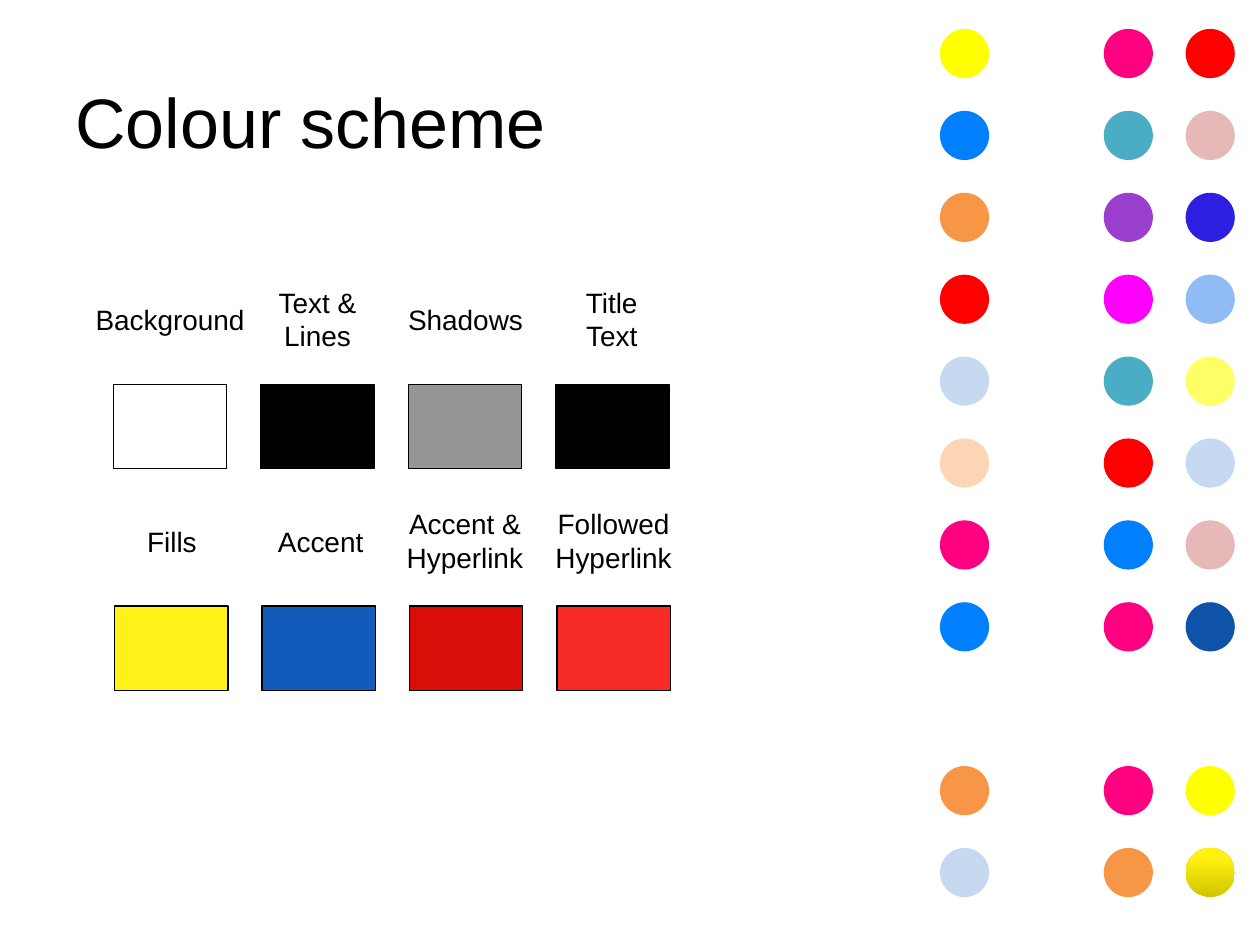
"""Build the colour scheme slide with its labelled swatches and dotted margin."""
from dataclasses import dataclass

from pptx import Presentation
from pptx.dml.color import RGBColor
from pptx.enum.shapes import MSO_SHAPE
from pptx.enum.text import MSO_ANCHOR, MSO_AUTO_SIZE, PP_ALIGN
from pptx.shapes.autoshape import Shape
from pptx.slide import Slide
from pptx.util import Emu, Pt

PX_PER_INCH = 100
EMU_PER_PX = 914400 // PX_PER_INCH


@dataclass(frozen=True)
class Theme:
    font: str = "Arial"
    text: str = "000000"
    outline: str = "000000"
    background: str = "FFFFFF"
    gradient_bottom: str = "D0C400"
    gradient_top: str = "FFF211"
    title_size: int = 40
    label_size: int = 16
    outline_width: float = 0.75


@dataclass(frozen=True)
class Swatch:
    paragraphs: tuple[str, ...]
    color: str
    label_left: int
    label_width: int


@dataclass(frozen=True)
class SwatchRow:
    left: int
    top: int
    label_middle: int
    swatches: tuple[Swatch, ...]


@dataclass(frozen=True)
class DotColumn:
    index: int
    colors: tuple[str, ...]


THEME = Theme()
SWATCH_WIDTH, SWATCH_HEIGHT, SWATCH_PITCH = 90, 67, 117
LABEL_HEIGHTS = {1: 37, 2: 64}
DOT_LEFT, DOT_TOP, DOT_SIZE, DOT_PITCH = 746, 23, 39, 65
DOT_ROWS = (0, 1, 2, 3, 4, 5, 6, 7, 9, 10)

SWATCH_ROWS = (
    SwatchRow(90, 305, 253, (
        Swatch(("Background",), "FFFFFF", 65, 140),
        Swatch(("Text &", "Lines"), "000000", 209, 86),
        Swatch(("Shadows",), "969696", 313, 113),
        Swatch(("Title\nText",), "000000", 453, 65),
    )),
    SwatchRow(91, 481, 429, (
        Swatch(("Fills",), "FFF218", 105, 63),
        Swatch(("Accent",), "125BBB", 209, 91),
        Swatch(("Accent &", "Hyperlink"), "D90E09", 311, 116),
        Swatch(("Followed", "Hyperlink"), "F62B26", 429, 116),
    )),
)

DOT_COLUMNS = (
    DotColumn(0, ("FFFF00", "0080FF", "F79646", "FF0000", "C6D9F1",
                  "FCD5B5", "FF0080", "0080FF", "F79646", "C6D9F1")),
    DotColumn(2, ("FF0080", "4BACC6", "993ECD", "FF00FF", "4BACC6",
                  "FF0000", "0080FF", "FF0080", "FF0080", "F79646")),
    DotColumn(3, ("FF0000", "E6B9B8", "2C1FDF", "90BBF4", "FFFF66",
                  "C6D9F1", "E6B9B8", "0F52A9", "FFFF00", THEME.gradient_top)),
)


def px(length: int) -> Emu:
    return Emu(length * EMU_PER_PX)


def rgb(color: str) -> RGBColor:
    return RGBColor.from_string(color)


def add_filled(slide: Slide, kind: MSO_SHAPE, left: int, top: int,
               width: int, height: int, color: str) -> Shape:
    shape = slide.shapes.add_shape(kind, px(left), px(top), px(width), px(height))
    shape.shadow.inherit = False
    shape.fill.solid()
    shape.fill.fore_color.rgb = rgb(color)
    shape.line.fill.background()
    return shape


def add_text(slide: Slide, left: int, top: int, width: int, height: int,
             paragraphs: tuple[str, ...], size: int, align: PP_ALIGN) -> Shape:
    box = slide.shapes.add_textbox(px(left), px(top), px(width), px(height))
    frame = box.text_frame
    frame.vertical_anchor = MSO_ANCHOR.MIDDLE
    for number, wording in enumerate(paragraphs):
        paragraph = frame.add_paragraph() if number else frame.paragraphs[0]
        paragraph.alignment = align
        for line_number, line in enumerate(wording.split("\n")):
            if line_number:
                paragraph.add_line_break()
            run = paragraph.add_run()
            run.text = line
            run.font.name = THEME.font
            run.font.size = Pt(size)
            run.font.color.rgb = rgb(THEME.text)
    return box


def add_swatch_row(slide: Slide, row: SwatchRow) -> None:
    for index, swatch in enumerate(row.swatches):
        left = row.left + index * SWATCH_PITCH
        tile = add_filled(slide, MSO_SHAPE.RECTANGLE, left, row.top,
                          SWATCH_WIDTH, SWATCH_HEIGHT, swatch.color)
        tile.line.color.rgb = rgb(THEME.outline)
        tile.line.width = Pt(THEME.outline_width)
        height = LABEL_HEIGHTS[len("\n".join(swatch.paragraphs).split("\n"))]
        label = add_text(slide, swatch.label_left, row.label_middle - height // 2,
                         swatch.label_width, height, swatch.paragraphs,
                         THEME.label_size, PP_ALIGN.CENTER)
        label.text_frame.word_wrap = False
        label.text_frame.auto_size = MSO_AUTO_SIZE.SHAPE_TO_FIT_TEXT


def add_dot_column(slide: Slide, column: DotColumn) -> list[Shape]:
    left = DOT_LEFT + column.index * DOT_PITCH
    return [add_filled(slide, MSO_SHAPE.OVAL, left, DOT_TOP + row * DOT_PITCH,
                       DOT_SIZE, DOT_SIZE, color)
            for row, color in zip(DOT_ROWS, column.colors)]


def shade(dot: Shape) -> None:
    dot.fill.gradient()
    dot.fill.gradient_angle = 90
    bottom, top = dot.fill.gradient_stops
    bottom.color.rgb = rgb(THEME.gradient_bottom)
    bottom.position = 0
    top.color.rgb = rgb(THEME.gradient_top)
    top.position = 0.8


def main() -> None:
    presentation = Presentation()
    presentation.slide_width, presentation.slide_height = px(1000), px(750)
    slide = presentation.slides.add_slide(presentation.slide_layouts[6])
    slide.background.fill.solid()
    slide.background.fill.fore_color.rgb = rgb(THEME.background)
    dot_columns = [add_dot_column(slide, column) for column in DOT_COLUMNS]
    shade(dot_columns[-1][-1])
    title = add_text(slide, 50, 29, 760, 134, ("Colour scheme",),
                     THEME.title_size, PP_ALIGN.LEFT)
    title.text_frame.word_wrap = True
    for row in SWATCH_ROWS:
        add_swatch_row(slide, row)
    presentation.save("out.pptx")


if __name__ == "__main__":
    main()
